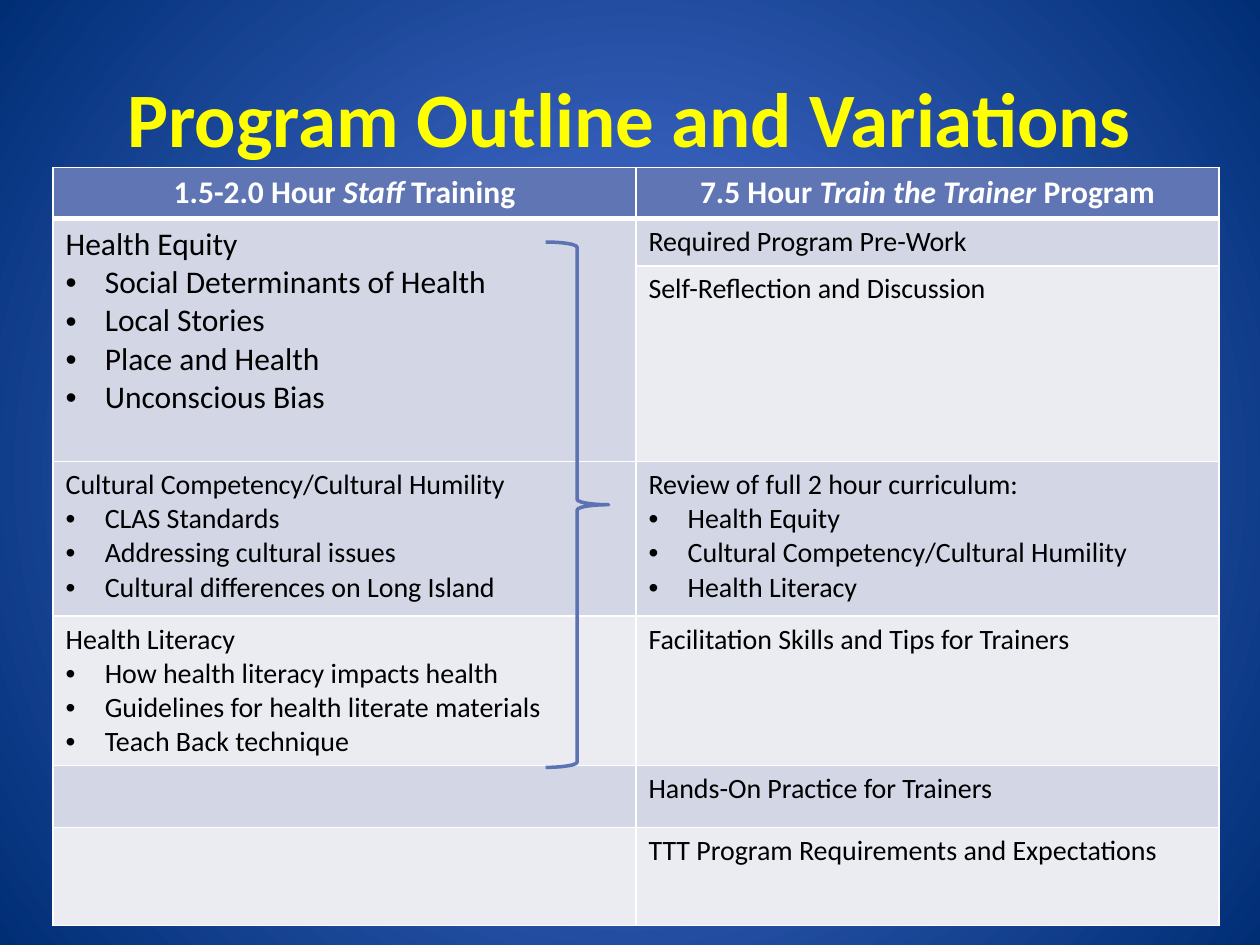
from dataclasses import dataclass

from lxml.etree import SubElement
from pptx import Presentation
from pptx.dml.color import RGBColor
from pptx.enum.shapes import MSO_SHAPE as Shape
from pptx.enum.text import MSO_ANCHOR as Anchor, PP_ALIGN as Align
from pptx.oxml import parse_xml
from pptx.oxml.ns import nsdecls, qn
from pptx.util import Cm, Pt

WHITE, BLACK, YELLOW = "FFFFFF", "000000", "FFFF00"
HEADER, BAND_DARK, BAND_LIGHT = "6076B4", "D2D6E5", "EAECF2"
ROW_HEIGHTS = [1.03, 0.95, 3.94, 3.12, 3.01, 1.25, 1.98]
COLUMN_WIDTH = 11.75


@dataclass
class Topic:
    row: int
    column: int
    heading: str
    points: tuple[str, ...] = ()
    size: int = 16
    row_span: int = 1


# Asterisks enclose italic words
HEADERS = ["1.5-2.0 Hour *Staff* Training", "7.5 Hour *Train the Trainer* Program"]
TOPICS = [
    Topic(1, 0, "Health Equity",
          ("Social Determinants of Health", "Local Stories", "Place and Health",
           "Unconscious Bias"), size=18, row_span=2),
    Topic(3, 0, "Cultural Competency/Cultural Humility",
          ("CLAS Standards", "Addressing cultural issues",
           "Cultural differences on Long Island")),
    Topic(4, 0, "Health Literacy",
          ("How health literacy impacts health",
           "Guidelines for health literate materials", "Teach Back technique")),
    Topic(1, 1, "Required Program Pre-Work"),
    Topic(2, 1, "Self-Reflection and Discussion"),
    Topic(3, 1, "Review of full 2 hour curriculum:",
          ("Health Equity", "Cultural Competency/Cultural Humility", "Health Literacy")),
    Topic(4, 1, "Facilitation Skills and Tips for Trainers"),
    Topic(5, 1, "Hands-On Practice for Trainers"),
    Topic(6, 1, "TTT Program Requirements and Expectations"),
]


def color(code: str) -> RGBColor:
    return RGBColor.from_string(code)


def write(frame, heading: str, *, points=(), size=16, ink=BLACK, bold=False,
          align=Align.LEFT) -> None:
    """Write a heading and its bulleted points."""
    for index, line in enumerate((heading, *points)):
        paragraph = frame.add_paragraph() if index else frame.paragraphs[0]
        paragraph.alignment = align
        if index:
            properties = paragraph._p.get_or_add_pPr()
            properties.set("marL", str(Cm(0.79)))
            properties.set("indent", str(-Cm(0.79)))
            SubElement(properties, qn("a:buFont"), typeface="Arial")
            SubElement(properties, qn("a:buChar"), char="•")
        for part, words in enumerate(line.split("*")):
            if not words:
                continue
            run = paragraph.add_run()
            run.text = words
            font = run.font
            font.name, font.size, font.bold = "Calibri", Pt(size), bold
            font.italic = part % 2 == 1
            font.color.rgb = color(ink)


def style_cell(cell, fill: str, bottom_width: float) -> None:
    cell.fill.solid()
    cell.fill.fore_color.rgb = color(fill)
    properties = cell._tc.get_or_add_tcPr()
    for index, side in enumerate("LRTB"):
        width = Pt(bottom_width if side == "B" else 1)
        properties.insert(index, parse_xml(
            f'<a:ln{side} {nsdecls("a")} w="{width}"><a:solidFill>'
            f'<a:srgbClr val="{WHITE}"/></a:solidFill></a:ln{side}>'))


def paint_background(slide) -> None:
    fill = slide.background.fill
    fill.gradient()
    for stop, code, position in zip(fill.gradient_stops, ("547BE2", "002E75"), (0, 1)):
        stop.color.rgb = color(code)
        stop.position = position
    linear = slide._element.find(".//" + qn("a:lin"))
    linear.getparent().replace(linear, parse_xml(
        f'<a:path {nsdecls("a")} path="circle">'
        '<a:fillToRect l="50000" t="50000" r="50000" b="50000"/></a:path>'))


def draw_outline(slide) -> None:
    rows = len(ROW_HEIGHTS)
    table = slide.shapes.add_table(rows, 2, Cm(1.07), Cm(3.38), Cm(2 * COLUMN_WIDTH),
                                   Cm(sum(ROW_HEIGHTS))).table
    for column in table.columns:
        column.width = Cm(COLUMN_WIDTH)
    for index, height in enumerate(ROW_HEIGHTS):
        table.rows[index].height = Cm(height)
        band = BAND_DARK if index % 2 else BAND_LIGHT
        for column in range(2):
            style_cell(table.cell(index, column), band if index else HEADER,
                       1 if index else 3)
    for column, header in enumerate(HEADERS):
        write(table.cell(0, column).text_frame, header, size=18, ink=WHITE, bold=True,
              align=Align.CENTER)
    for topic in TOPICS:
        cell = table.cell(topic.row, topic.column)
        if topic.row_span > 1:
            cell.merge(table.cell(topic.row + topic.row_span - 1, topic.column))
        write(cell.text_frame, topic.heading, points=topic.points, size=topic.size)


def main() -> None:
    deck = Presentation()
    deck.slide_width, deck.slide_height = Cm(25.4), Cm(19.05)
    slide = deck.slides.add_slide(deck.slide_layouts[6])
    paint_background(slide)

    # Title
    title = slide.shapes.add_textbox(Cm(1.27), Cm(0.76), Cm(22.86), Cm(3.18)).text_frame
    title.word_wrap = True
    title.vertical_anchor = Anchor.MIDDLE
    write(title, "Program Outline and Variations", size=44, ink=YELLOW, bold=True,
          align=Align.CENTER)

    draw_outline(slide)

    # Brace joining the staff topics to the curriculum review
    brace = slide.shapes.add_shape(Shape.RIGHT_BRACE, Cm(11), Cm(4.88), Cm(1.27), Cm(10.59))
    brace.shadow.inherit = False
    brace.fill.background()
    brace.line.color.rgb = color("5C72B2")
    brace.line.width = Pt(2)

    deck.save("out.pptx")


if __name__ == "__main__":
    main()
